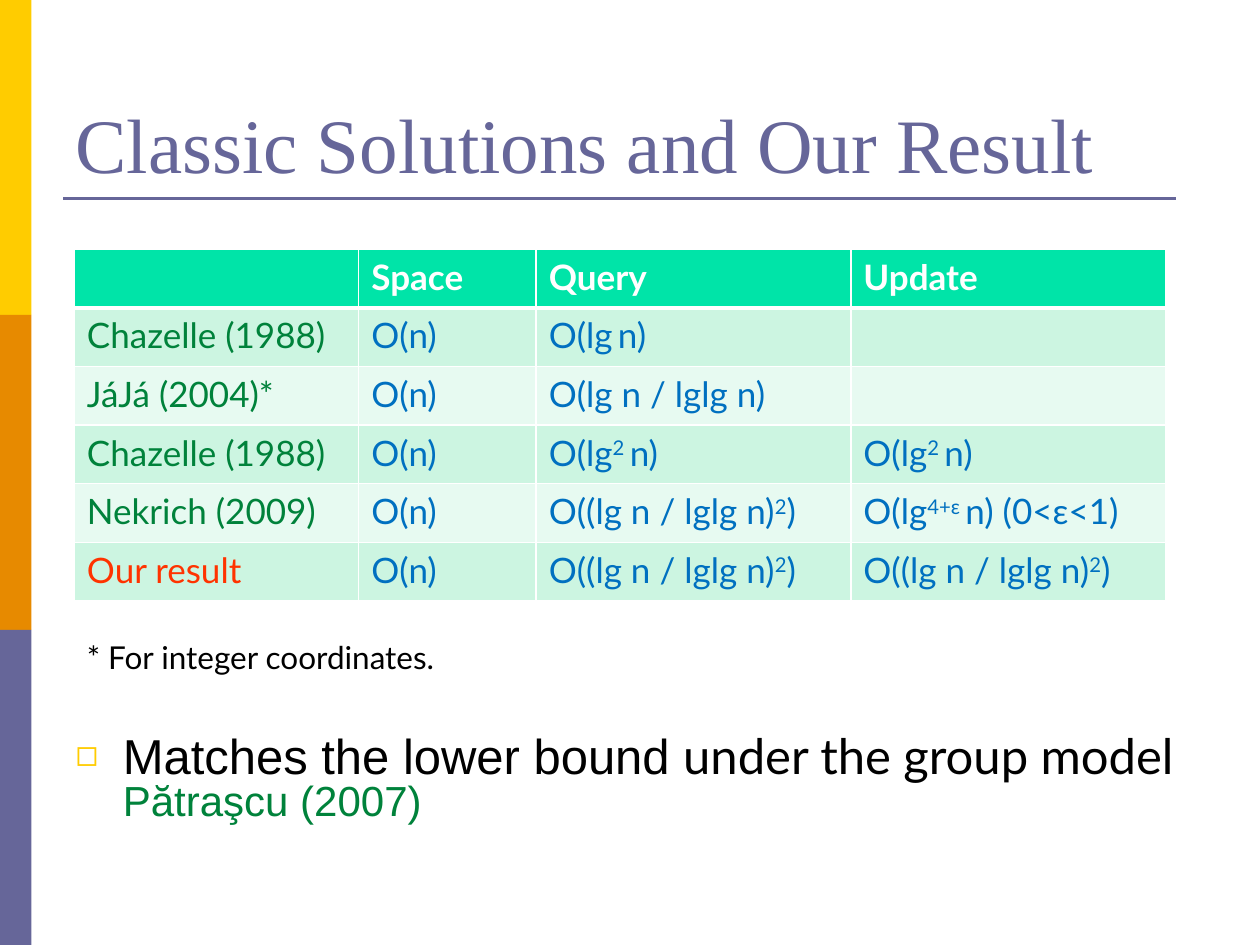
from dataclasses import dataclass

from lxml import etree
from pptx import Presentation
from pptx.dml.color import RGBColor
from pptx.enum.shapes import MSO_CONNECTOR, MSO_SHAPE
from pptx.enum.text import MSO_ANCHOR, MSO_AUTO_SIZE, PP_ALIGN
from pptx.oxml.ns import qn
from pptx.util import Pt

RECTANGLE = MSO_SHAPE.RECTANGLE
STRAIGHT = MSO_CONNECTOR.STRAIGHT
BOTTOM, TOP = MSO_ANCHOR.BOTTOM, MSO_ANCHOR.TOP
NO_AUTOFIT = MSO_AUTO_SIZE.NONE
LEFT = PP_ALIGN.LEFT


@dataclass(frozen=True)
class Theme:
    yellow: str = "FFCC00"
    orange: str = "E78A00"
    violet: str = "666699"
    header: str = "00E4A8"
    bands: tuple = ("CCF5E1", "E7FAF1")
    white: str = "FFFFFF"
    black: str = "000000"
    green: str = "00823B"
    blue: str = "0070C0"
    red: str = "FF3300"
    serif: str = "Times New Roman"
    sans: str = "Arial"
    table_font: str = "Lato"
    title_size: int = 44
    body_size: int = 28
    citation_size: int = 24
    table_size: int = 20
    note_size: int = 18


THEME = Theme()

# A cell is a list of (text, is_superscript) pieces
LINEAR = [("O(n)", False)]
LOG = [("O(lg", False), (" ", True), ("n)", False)]
LOG_RATIO = [("O(lg n / lglg n)", False)]
LOG_SQUARED = [("O(lg", False), ("2 ", True), ("n)", False)]
RATIO_SQUARED = [("O((lg n / lglg n)", False), ("2", True), (")", False)]
LOG_POWER = [("O(lg", False), ("4+ε ", True), ("n) (0<ε<1)", False)]

HEADINGS = ["", "Space", "Query", "Update"]
RESULTS = [
    ("Chazelle (1988)", LINEAR, LOG, []),
    ("JáJá (2004)*", LINEAR, LOG_RATIO, []),
    ("Chazelle (1988)", LINEAR, LOG_SQUARED, LOG_SQUARED),
    ("Nekrich (2009)", LINEAR, RATIO_SQUARED, LOG_POWER),
    ("Our result", LINEAR, RATIO_SQUARED, RATIO_SQUARED),
]
COLUMN_SHARES = [2.26, 1.41, 2.5, 2.5]


def color(value):
    return RGBColor.from_string(value)


def add_run(paragraph, text, font, size, fill, bold=False, superscript=False):
    run = paragraph.add_run()
    run.text = text
    run.font.name = font
    run.font.size = Pt(size)
    run.font.bold = bold
    run.font.color.rgb = color(fill)
    if superscript:
        run._r.get_or_add_rPr().set("baseline", "30000")


def place(shape, left, top, width, height):
    shape.left, shape.top = Pt(left), Pt(top)
    shape.width, shape.height = Pt(width), Pt(height)


def add_side_bar(slide, left, top, width, height):
    fills = [THEME.yellow, THEME.orange, THEME.violet]
    part = height / len(fills)
    for index, fill in enumerate(fills):
        block = slide.shapes.add_shape(
            RECTANGLE, Pt(left), Pt(top + index * part), Pt(width), Pt(part))
        block.shadow.inherit = False
        block.fill.solid()
        block.fill.fore_color.rgb = color(fill)
        block.line.fill.background()


def add_title(slide, left, top, width, height):
    title = slide.shapes.title
    place(title, left, top, width, height)
    frame = title.text_frame
    frame.auto_size = NO_AUTOFIT
    frame.vertical_anchor = BOTTOM
    paragraph = frame.paragraphs[0]
    paragraph.alignment = LEFT
    add_run(paragraph, "Classic Solutions and Our Result",
            THEME.serif, THEME.title_size, THEME.violet)

    # Rule just under the title
    rule_top = Pt(top + height + 2)
    rule = slide.shapes.add_connector(
        STRAIGHT, Pt(left), rule_top, Pt(left + 636), rule_top)
    rule.line.color.rgb = color(THEME.violet)
    rule.line.width = Pt(1.5)
    etree.SubElement(rule._element.spPr, qn("a:effectLst"))


def format_cell(cell, fill, top_border=1, bottom_border=1):
    # Borders come before the fill in the cell properties
    properties = cell._tc.get_or_add_tcPr()
    borders = {"a:lnL": 1, "a:lnR": 1, "a:lnT": top_border, "a:lnB": bottom_border}
    for tag, width in borders.items():
        line = etree.SubElement(properties, qn(tag), w=str(Pt(width)))
        solid = etree.SubElement(line, qn("a:solidFill"))
        etree.SubElement(solid, qn("a:srgbClr"), val=THEME.white)
    cell.fill.solid()
    cell.fill.fore_color.rgb = color(fill)


def add_results_table(slide, left, top, width, height):
    row_count = len(RESULTS) + 1
    table = slide.shapes.add_table(
        row_count, len(HEADINGS), Pt(left), Pt(top), Pt(width), Pt(height)).table
    table.horz_banding = False
    for column, share in zip(table.columns, COLUMN_SHARES):
        column.width = Pt(width * share / sum(COLUMN_SHARES))
    for row in table.rows:
        row.height = Pt(height / row_count)

    for cell, heading in zip(table.rows[0].cells, HEADINGS):
        format_cell(cell, THEME.header, bottom_border=3)
        if heading:
            add_run(cell.text_frame.paragraphs[0], heading, THEME.table_font,
                    THEME.table_size, THEME.white, bold=True)

    for index, (name, *bounds) in enumerate(RESULTS):
        name_color = THEME.red if index == len(RESULTS) - 1 else THEME.green
        for column, pieces in enumerate([[(name, False)], *bounds]):
            cell = table.cell(index + 1, column)
            format_cell(cell, THEME.bands[index % 2], top_border=1 if index else 3)
            for text, superscript in pieces:
                add_run(cell.text_frame.paragraphs[0], text, THEME.table_font,
                        THEME.table_size, THEME.blue if column else name_color,
                        bold=False, superscript=superscript)


def add_footnote(slide, left, top, width, height):
    note = slide.shapes.add_textbox(Pt(left), Pt(top), Pt(width), Pt(height))
    note.text_frame.word_wrap = True
    add_run(note.text_frame.paragraphs[0], "* For integer coordinates.",
            THEME.table_font, THEME.note_size, THEME.black)


def add_conclusion(slide, left, top, width, height):
    body = slide.placeholders[1]
    place(body, left, top, width, height)
    frame = body.text_frame
    frame.auto_size = NO_AUTOFIT
    frame.vertical_anchor = TOP
    paragraph = frame.paragraphs[0]
    paragraph.alignment = LEFT
    paragraph.line_spacing = 0.8
    paragraph.space_before = Pt(0)

    # Hollow square bullet with a hanging indent
    properties = paragraph._p.get_or_add_pPr()
    properties.set("marL", str(Pt(27)))
    properties.set("indent", str(-Pt(27)))
    bullet_color = etree.SubElement(properties, qn("a:buClr"))
    etree.SubElement(bullet_color, qn("a:srgbClr"), val=THEME.yellow)
    etree.SubElement(properties, qn("a:buSzPct"), val="75000")
    etree.SubElement(properties, qn("a:buChar"), char="◻")

    add_run(paragraph, "Matches the lower bound ",
            THEME.sans, THEME.body_size, THEME.black)
    add_run(paragraph, "under the group model ",
            THEME.table_font, THEME.body_size, THEME.black)
    add_run(paragraph, "Pătraşcu (2007)",
            THEME.sans, THEME.citation_size, THEME.green)


def main():
    presentation = Presentation()
    presentation.slide_width, presentation.slide_height = Pt(720), Pt(540)
    slide = presentation.slides.add_slide(presentation.slide_layouts[1])
    add_side_bar(slide, 0, 0, 18, 540)
    add_title(slide, 36, 21.6, 648, 90)
    add_results_table(slide, 42.5, 142.5, 623.5, 201)
    add_conclusion(slide, 36, 417.5, 648, 57)
    add_footnote(slide, 42.5, 361, 425.5, 29)
    presentation.save("out.pptx")


if __name__ == "__main__":
    main()
